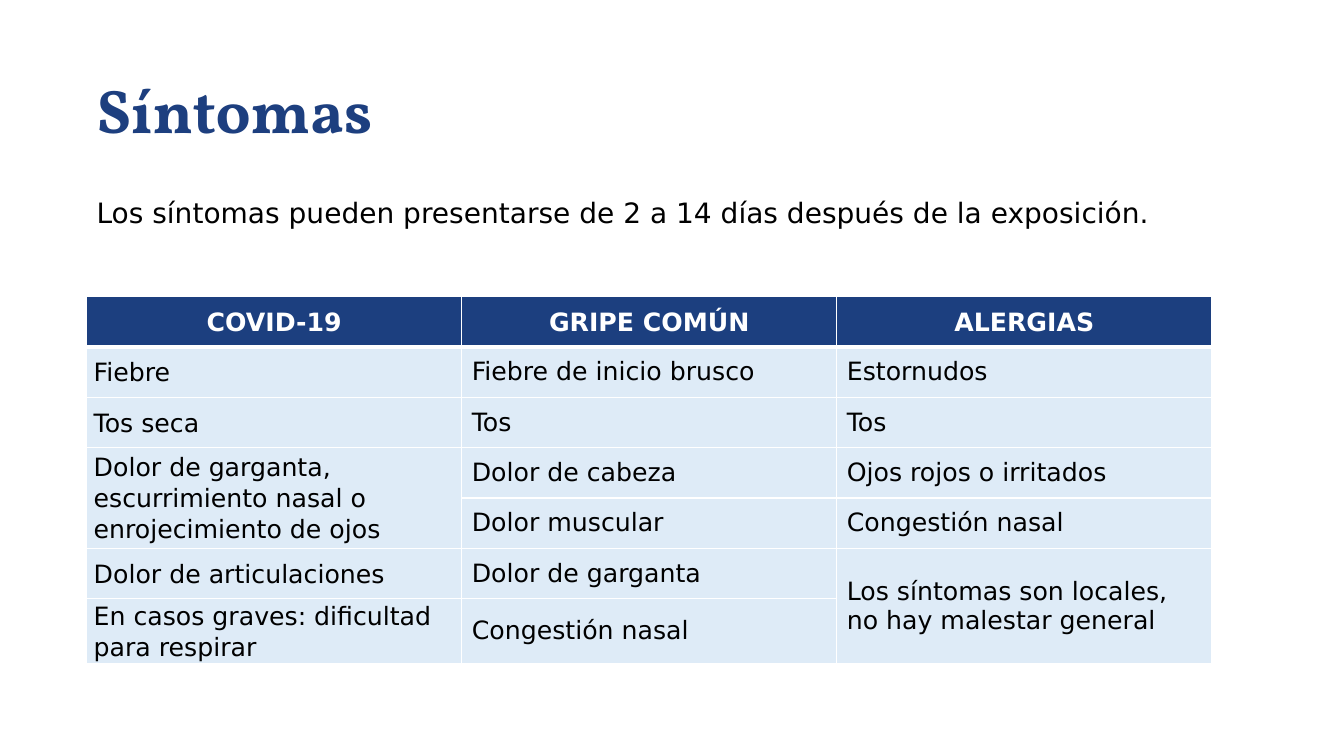
from dataclasses import dataclass

from lxml.etree import SubElement
from pptx import Presentation
from pptx.dml.color import RGBColor
from pptx.enum.text import MSO_ANCHOR, PP_ALIGN
from pptx.oxml.ns import qn
from pptx.util import Inches, Pt


@dataclass(frozen=True)
class Theme:
    title_font: str = "Vollkorn"
    body_font: str = "DejaVu Sans"
    title_blue: str = "1D3F7F"
    header_blue: str = "1C3F7F"
    row_blue: str = "DEEBF7"
    white: str = "FFFFFF"
    black: str = "000000"
    title_size: int = 44
    intro_size: int = 20
    table_size: int = 18


THEME = Theme()
HEADERS = ("COVID-19", "GRIPE COMÚN", "ALERGIAS")
# None continues the cell above it.
SYMPTOMS = (
    ("Fiebre", "Fiebre de inicio brusco", "Estornudos"),
    ("Tos seca", "Tos", "Tos"),
    ("Dolor de garganta, escurrimiento nasal o enrojecimiento de ojos",
     "Dolor de cabeza", "Ojos rojos o irritados"),
    (None, "Dolor muscular", "Congestión nasal"),
    ("Dolor de articulaciones", "Dolor de garganta",
     "Los síntomas son locales, no hay malestar general"),
    ("En casos graves: dificultad para respirar", "Congestión nasal", None),
)


def write_text(frame, text, *, size, font=THEME.body_font, color=THEME.black,
               bold=False, align=PP_ALIGN.LEFT, line_spacing=1.0, before=0):
    paragraph = frame.paragraphs[0]
    paragraph.alignment = align
    paragraph.line_spacing = line_spacing
    paragraph.space_before = Pt(before)
    run = paragraph.add_run()
    run.text = text
    run.font.name = font
    run.font.size = Pt(size)
    run.font.bold = bold
    run.font.color.rgb = RGBColor.from_string(color)


def add_text(slide, box, text, anchor=MSO_ANCHOR.TOP, **text_format):
    frame = slide.shapes.add_textbox(*map(Inches, box)).text_frame
    frame.word_wrap = True
    frame.vertical_anchor = anchor
    write_text(frame, text, **text_format)


def add_heading(slide, box):
    add_text(slide, box, "Síntomas", MSO_ANCHOR.MIDDLE, size=THEME.title_size,
             font=THEME.title_font, color=THEME.title_blue, bold=True,
             line_spacing=0.9)


def add_intro(slide, box):
    add_text(slide, box,
             "Los síntomas pueden presentarse de 2 a 14 días después de la exposición.",
             size=THEME.intro_size, align=PP_ALIGN.JUSTIFY, line_spacing=1.1,
             before=4)


def set_borders(cell, **widths):
    """Draw white cell borders; widths in points are keyed L, R, T, B in that order."""
    properties = cell._tc.get_or_add_tcPr()
    for position, (side, width) in enumerate(widths.items()):
        line = SubElement(properties, qn(f"a:ln{side}"), w=str(Pt(width)))
        fill = SubElement(line, qn("a:solidFill"))
        SubElement(fill, qn("a:srgbClr"), val=THEME.white)
        properties.insert(position, line)


def style_cell(cell, fill, compact):
    cell.fill.solid()
    cell.fill.fore_color.rgb = RGBColor.from_string(fill)
    cell.vertical_anchor = MSO_ANCHOR.MIDDLE
    if compact:
        cell.margin_left = cell.margin_right = Inches(0.07)
        cell.margin_top = cell.margin_bottom = 0


def add_symptom_table(slide, box):
    row_count, column_count = len(SYMPTOMS) + 1, len(HEADERS)
    table = slide.shapes.add_table(row_count, column_count,
                                   *map(Inches, box)).table
    for row in table.rows:
        row.height = Inches(box[3] / row_count)
    for column in table.columns:
        column.width = Inches(box[2] / column_count)

    for column, label in enumerate(HEADERS):
        header = table.cell(0, column)
        style_cell(header, THEME.header_blue, compact=True)
        set_borders(header, L=1, R=1, T=1, B=3)
        write_text(header.text_frame, label, size=THEME.table_size,
                   color=THEME.white, bold=True, align=PP_ALIGN.CENTER,
                   line_spacing=1.07)

    for row, symptoms in enumerate(SYMPTOMS, start=1):
        for column, symptom in enumerate(symptoms):
            cell = table.cell(row, column)
            first_column = column == 0
            style_cell(cell, THEME.row_blue, compact=first_column)
            if symptom is None:
                table.cell(row - 1, column).merge(cell)
            else:
                write_text(cell.text_frame, symptom, size=THEME.table_size,
                           line_spacing=1.07 if first_column else 1.0)


def main():
    presentation = Presentation()
    presentation.slide_width = Inches(13.33)
    presentation.slide_height = Inches(7.5)
    slide = presentation.slides.add_slide(presentation.slide_layouts[6])
    add_heading(slide, (0.86, 0.4, 11.5, 1.45))
    add_intro(slide, (0.86, 1.86, 10.8, 4.85))
    add_symptom_table(slide, (0.86, 2.94, 11.16, 3.5))
    presentation.save("out.pptx")


if __name__ == "__main__":
    main()
